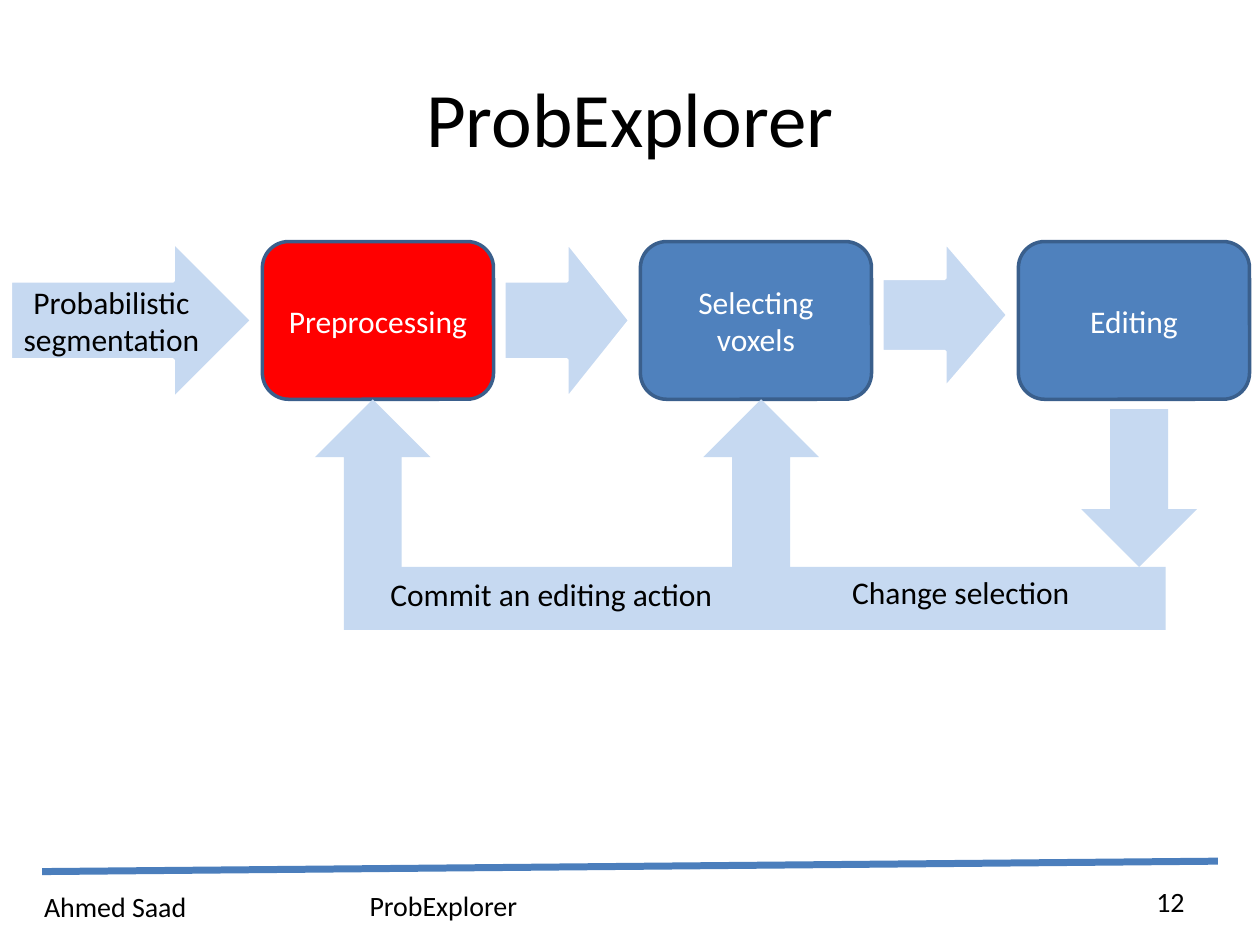
from lxml import etree
from pptx import Presentation
from pptx.dml.color import RGBColor
from pptx.enum.shapes import MSO_CONNECTOR, MSO_SHAPE
from pptx.enum.text import MSO_ANCHOR, PP_ALIGN
from pptx.oxml.ns import qn
from pptx.util import Cm, Pt

ROUNDED, RECT = MSO_SHAPE.ROUNDED_RECTANGLE, MSO_SHAPE.RECTANGLE
RIGHT_ARROW, DOWN_ARROW, UP_ARROW = (
    MSO_SHAPE.RIGHT_ARROW, MSO_SHAPE.DOWN_ARROW, MSO_SHAPE.UP_ARROW)
STRAIGHT = MSO_CONNECTOR.STRAIGHT
LEFT, CENTER, RIGHT = PP_ALIGN.LEFT, PP_ALIGN.CENTER, PP_ALIGN.RIGHT
TOP, MIDDLE = MSO_ANCHOR.TOP, MSO_ANCHOR.MIDDLE

BLACK = RGBColor(0x00, 0x00, 0x00)
WHITE = RGBColor(0xFF, 0xFF, 0xFF)
RED = RGBColor(0xFF, 0x00, 0x00)
BLUE = RGBColor(0x4F, 0x81, 0xBD)
DARK_BLUE = RGBColor(0x3A, 0x5F, 0x8C)
RULE_BLUE = RGBColor(0x4B, 0x7E, 0xBC)
PALE_BLUE = RGBColor(0xC6, 0xD9, 0xF1)


class Deck:
    font = "Calibri"

    def __init__(self, prs):
        self.prs = prs
        self.s = None

    def add_slide(self):
        self.s = self.prs.slides.add_slide(self.prs.slide_layouts[5])

    def set_text(self, sp, text, size, color=BLACK, align=LEFT, anchor=TOP):
        tf = sp.text_frame
        for name, value in {"word_wrap": True, "vertical_anchor": anchor}.items():
            setattr(tf, name, value)
        p = tf.paragraphs[0]
        p.alignment = align
        r = p.add_run()
        r.text = text
        for name, value in {"name": self.font, "size": Pt(size)}.items():
            setattr(r.font, name, value)
        r.font.color.rgb = color

    def title(self, text, box):
        sp = self.s.shapes.title
        for name, value in zip(("left", "top", "width", "height"), box):
            setattr(sp, name, Cm(value))
        self.set_text(sp, text, 44, align=CENTER, anchor=MIDDLE)

    def shape(self, kind, box, fill, line=None, text=None, color=BLACK):
        sp = self.s.shapes.add_shape(kind, *map(Cm, box))
        sp.shadow.inherit = False
        sp.fill.solid()
        sp.fill.fore_color.rgb = fill
        if line is None:
            sp.line.fill.background()
        else:
            sp.line.color.rgb = line
            sp.line.width = Pt(2)
        if text:
            self.set_text(sp, text, 18, color, CENTER, MIDDLE)

    def label(self, text, box, size, align=LEFT, anchor=TOP):
        sp = self.s.shapes.add_textbox(*map(Cm, box))
        self.set_text(sp, text, size, align=align, anchor=anchor)

    def rule(self, start, end):
        c = self.s.shapes.add_connector(STRAIGHT, *map(Cm, start + end))
        c.line.color.rgb = RULE_BLUE
        c.line.width = Pt(4)
        etree.SubElement(c._element.spPr, qn("a:effectLst"))


def main():
    prs = Presentation()
    prs.slide_width, prs.slide_height = Cm(25.4), Cm(19.05)
    deck = Deck(prs)
    deck.add_slide()

    deck.label("Ahmed Saad", (0.64, 17.8, 3.81, 0.94), 16)
    deck.label("ProbExplorer", (7.2, 17.78, 4.23, 0.94), 16)
    deck.rule((0.85, 17.57), (24.55, 17.36))
    deck.title("ProbExplorer", (1.27, 0.76, 22.86, 3.18))

    row_top, row_height, pitch = 4.87, 3.18, 7.62
    steps = [("Preprocessing", RED), ("Selecting voxels", BLUE), ("Editing", BLUE)]
    for i, (text, fill) in enumerate(steps):
        box = (5.29 + i * pitch, row_top, 4.66, row_height)
        deck.shape(ROUNDED, box, fill, DARK_BLUE, text, WHITE)

    flows = [
        (0.21, 4.87, row_height, "Probabilistic segmentation"),
        (10.16, 2.54, row_height, None),
        (10.16 + pitch, 2.54, 2.96, None),
    ]
    for left, width, height, text in flows:
        deck.shape(RIGHT_ARROW, (left, row_top, width, height), PALE_BLUE, WHITE, text)

    bar_top, bar_height = 11.43, 1.27
    deck.shape(RECT, (6.99, bar_top, 16.51, bar_height), PALE_BLUE)
    returns = [
        (DOWN_ARROW, 21.8, 8.25, bar_top),
        (UP_ARROW, 14.18, 8.05, bar_top),
        (UP_ARROW, 6.35, 8.05, bar_top + bar_height),
    ]
    for kind, left, top, bottom in returns:
        deck.shape(kind, (left, top, 2.33, bottom - top), PALE_BLUE)

    deck.label("Change selection", (16.93, bar_top, 5.29, 1.03), 18)
    deck.label("Commit an editing action", (5.93, 11.47, 10.37, 1.03), 18, CENTER)
    deck.label("12", (18.2, 17.66, 5.93, 1.01), 16, RIGHT, MIDDLE)

    prs.save("out.pptx")


if __name__ == "__main__":
    main()
